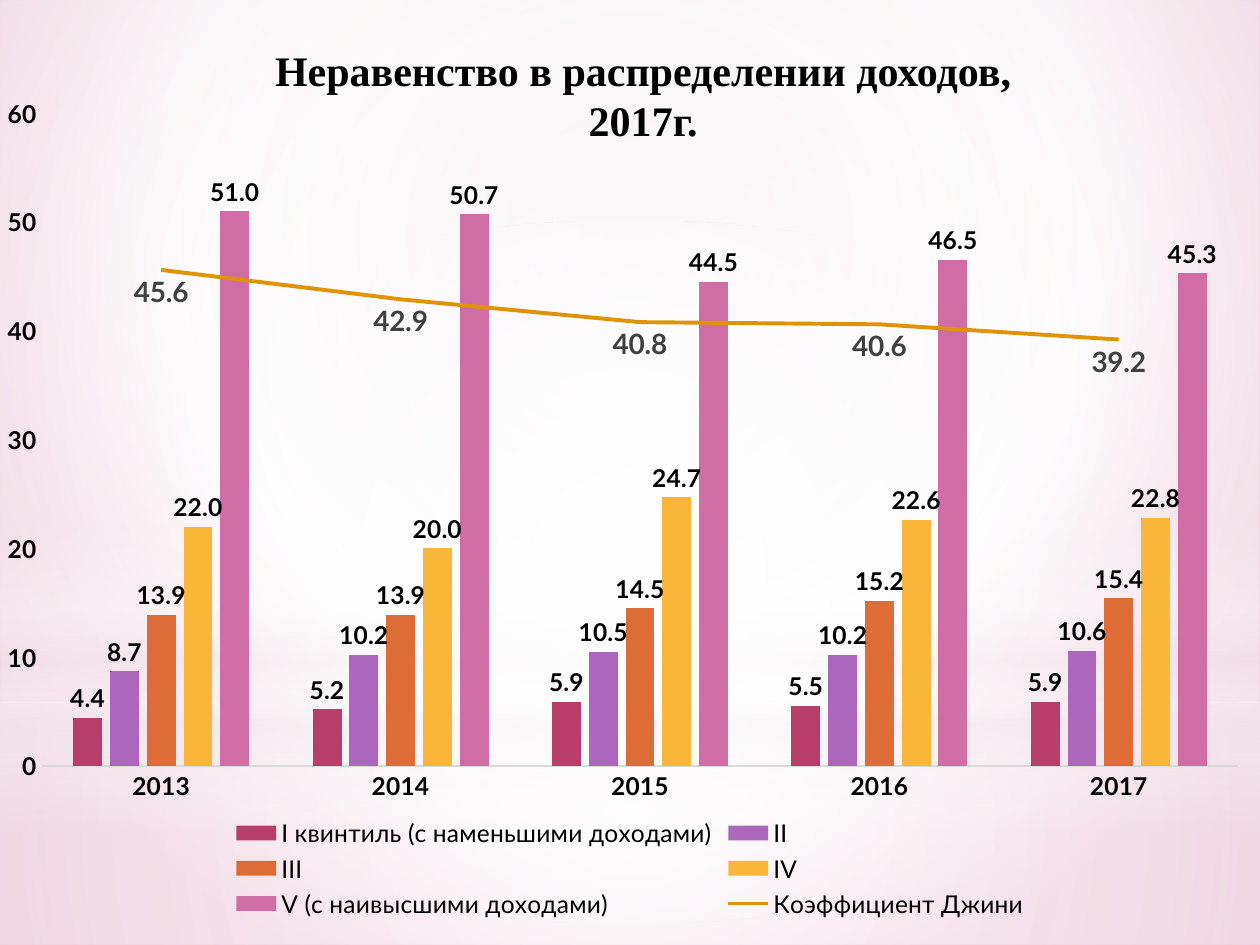
from lxml.etree import SubElement
from pptx import Presentation
from pptx.chart.data import CategoryChartData
from pptx.dml.color import RGBColor
from pptx.enum.chart import (XL_CHART_TYPE as ChartType, XL_LABEL_POSITION as LabelPos,
                             XL_LEGEND_POSITION as LegendPos, XL_MARKER_STYLE as Marker,
                             XL_TICK_MARK as Tick)
from pptx.enum.shapes import MSO_SHAPE as Shape
from pptx.enum.text import MSO_ANCHOR as Anchor, MSO_AUTO_SIZE as AutoSize, PP_ALIGN as Align
from pptx.oxml import parse_xml
from pptx.oxml.ns import nsdecls, qn
from pptx.util import Cm, Pt

WIDTH, HEIGHT = 25.4, 19.05
COLORS = {"text": "000000", "gini_label": "404040", "axis": "D9D9D9", "white": "FFFFFF",
          "blush": "F4E7ED", "pale": "EDDAE2", "pink": "E09DBC", "gini": "DF9307"}
YEARS = ["2013", "2014", "2015", "2016", "2017"]
QUINTILES = [
    ("I квинтиль (с наменьшими доходами)", "B83D68", [4.4, 5.2, 5.9, 5.5, 5.9]),
    ("II", "AC66BB", [8.7, 10.2, 10.5, 10.2, 10.6]),
    ("III", "DE6C36", [13.9, 13.9, 14.5, 15.2, 15.4]),
    ("IV", "F9B639", [22.0, 20.0, 24.7, 22.6, 22.8]),
    ("V (с наивысшими доходами)", "CF6DA4", [51.0, 50.7, 44.5, 46.5, 45.3]),
]
GINI = ("Коэффициент Джини", [45.6, 42.9, 40.8, 40.6, 39.2])


def rgb(name):
    """Return the colour stored under a name."""
    return RGBColor.from_string(COLORS[name])


def set_font(font, size, color="text", bold=False, face="Lato"):
    """Set face, size, weight and colour of a font."""
    font.name, font.size, font.bold = face, Pt(size), bold
    font.color.rgb = rgb(color)


def set_gradient(fill, owner, stops, center=None):
    """Fill with (position, colour, opacity) stops, circular around center or top to bottom."""
    fill.gradient()
    gradient = owner.find(".//" + qn("a:gradFill"))
    for child in list(gradient):
        gradient.remove(child)
    stop_list = SubElement(gradient, qn("a:gsLst"))
    for position, color, opacity in stops:
        stop = SubElement(stop_list, qn("a:gs"), pos=str(position * 1000))
        tint = SubElement(stop, qn("a:srgbClr"), val=COLORS[color])
        if opacity < 100:
            SubElement(tint, qn("a:alpha"), val=str(opacity * 1000))
    if center:
        circle = SubElement(gradient, qn("a:path"), path="circle")
        edges = {side: str(value * 1000) for side, value in zip("ltrb", center)}
        SubElement(circle, qn("a:fillToRect"), **edges)
    else:
        SubElement(gradient, qn("a:lin"), ang="5400000", scaled="0")


def add_backdrop(slide, width, height):
    """Paint the background and its translucent layers, split at the horizon."""
    set_gradient(slide.background.fill, slide.element,
                 [(0, "pale", 100), (60, "white", 100), (100, "pink", 100)], (20, 10, 20, 60))
    middle = (50, 50, 50, 50)
    horizon = 14.17
    layers = [
        (Shape.RECTANGLE, horizon, height - horizon, middle,
         [(0, "white", 91), (37, "white", 76), (100, "blush", 79)]),
        (Shape.RECTANGLE, 0, horizon, middle,
         [(0, "white", 89), (48, "white", 62), (100, "blush", 79)]),
        (Shape.RECTANGLE, 10.46, 6.35, None,
         [(0, "white", 0), (29, "white", 30), (45, "blush", 40),
          (55, "white", 26), (65, "blush", 60), (100, "white", 0)]),
        (Shape.OVAL, 4.45, horizon, middle, [(0, "white", 100), (56, "white", 0)]),
    ]
    for kind, top, layer_height, center, stops in layers:
        layer = slide.shapes.add_shape(kind, 0, Cm(top), Cm(width), Cm(layer_height))
        layer.shadow.inherit = False
        layer.line.fill.background()
        set_gradient(layer.fill, layer.element, stops, center)


def add_title(slide, left, top, width, height):
    """Place the title placeholder above the backdrop."""
    title = slide.shapes.title
    slide.shapes.element.append(title.element)
    title.left, title.top, title.width, title.height = map(Cm, (left, top, width, height))
    frame = title.text_frame
    frame.text = "Неравенство в распределении доходов, 2017г."
    frame.word_wrap = True
    frame.auto_size = AutoSize.NONE
    frame.vertical_anchor = Anchor.TOP
    frame.margin_left, frame.margin_right = Cm(0.38), Cm(0.25)
    frame.margin_top = Cm(0.25)
    heading = frame.paragraphs[0]
    heading.alignment = Align.CENTER
    set_font(heading.font, 24, bold=True, face="Times New Roman")


def label_values(series, size, color, position):
    """Show the values of a series with one decimal."""
    labels = series.data_labels
    labels.show_value = True
    labels.number_format, labels.number_format_is_linked = "0.0", False
    labels.position = position
    set_font(labels.font, size, color, bold=True)


def split_off_line(chart):
    """Move the last column series into a line plot on the same axes and return it."""
    bar_plot = chart._chartSpace.find(".//" + qn("c:barChart"))
    series = bar_plot.findall(qn("c:ser"))[-1]
    for flag in series.findall(qn("c:invertIfNegative")):
        series.remove(flag)
    line_plot = parse_xml(f'<c:lineChart {nsdecls("c")}><c:grouping val="standard"/>'
                          '<c:varyColors val="0"/><c:marker val="1"/></c:lineChart>')
    line_plot.insert(2, series)
    for axis_id in bar_plot.findall(qn("c:axId")):
        SubElement(line_plot, qn("c:axId"), val=axis_id.get("val"))
    bar_plot.addnext(line_plot)
    return chart.plots[1].series[0]


def set_plot_layout(chart, **fractions):
    """Fix the inner plot area as fractions of the chart."""
    area = chart._chartSpace.find(".//" + qn("c:plotArea"))
    for old in area.findall(qn("c:layout")):
        area.remove(old)
    sizes = "".join(f'<c:{key} val="{value}"/>' for key, value in fractions.items())
    area.insert(0, parse_xml(
        f'<c:layout {nsdecls("c")}><c:manualLayout><c:layoutTarget val="inner"/>'
        f'<c:xMode val="edge"/><c:yMode val="edge"/>{sizes}</c:manualLayout></c:layout>'))


def format_axes(chart):
    """Style the year axis and the value axis."""
    years, values = chart.category_axis, chart.value_axis
    for axis in (years, values):
        axis.has_major_gridlines = False
        axis.major_tick_mark = axis.minor_tick_mark = Tick.NONE
        set_font(axis.tick_labels.font, 14, bold=True)
    years.format.line.color.rgb = rgb("axis")
    years.format.line.width = Pt(0.75)
    values.format.line.fill.background()
    values.minimum_scale, values.maximum_scale, values.major_unit = 0, 60, 10
    values.tick_labels.number_format = "0"
    values.tick_labels.number_format_is_linked = False


def add_income_chart(slide, left, top, width, height):
    """Draw the quintile columns with the Gini line."""
    data = CategoryChartData(number_format="0.0")
    data.categories = YEARS
    for name, _, shares in QUINTILES:
        data.add_series(name, shares)
    data.add_series(*GINI)
    chart = slide.shapes.add_chart(ChartType.COLUMN_CLUSTERED,
                                   *map(Cm, (left, top, width, height)), data).chart
    chart.has_title = False
    set_font(chart.font, 10)
    gini = split_off_line(chart)

    columns = chart.plots[0]
    columns.gap_width, columns.overlap, columns.vary_by_categories = 219, -27, False
    for series, (_, color, _) in zip(columns.series, QUINTILES):
        series.format.fill.solid()
        series.format.fill.fore_color.rgb = RGBColor.from_string(color)
        label_values(series, 14, "text", LabelPos.OUTSIDE_END)

    gini.smooth = False
    gini.marker.style = Marker.NONE
    gini.format.line.color.rgb = rgb("gini")
    gini.format.line.width = Pt(2.25)
    label_values(gini, 16, "gini_label", LabelPos.BELOW)

    format_axes(chart)
    set_plot_layout(chart, x=0.033, y=0.023, w=0.95, h=0.787)
    chart.has_legend = True
    chart.legend.position = LegendPos.BOTTOM
    chart.legend.include_in_layout = False
    set_font(chart.legend.font, 14)


def main():
    """Build and save the slide."""
    deck = Presentation()
    deck.slide_width, deck.slide_height = Cm(WIDTH), Cm(HEIGHT)
    slide = deck.slides.add_slide(deck.slide_layouts[5])
    add_backdrop(slide, WIDTH, HEIGHT)
    add_title(slide, 4.01, 0.64, 17.78, 2.97)
    add_income_chart(slide, 0, 1.9, WIDTH, 16.72)
    deck.save("out.pptx")


if __name__ == "__main__":
    main()
